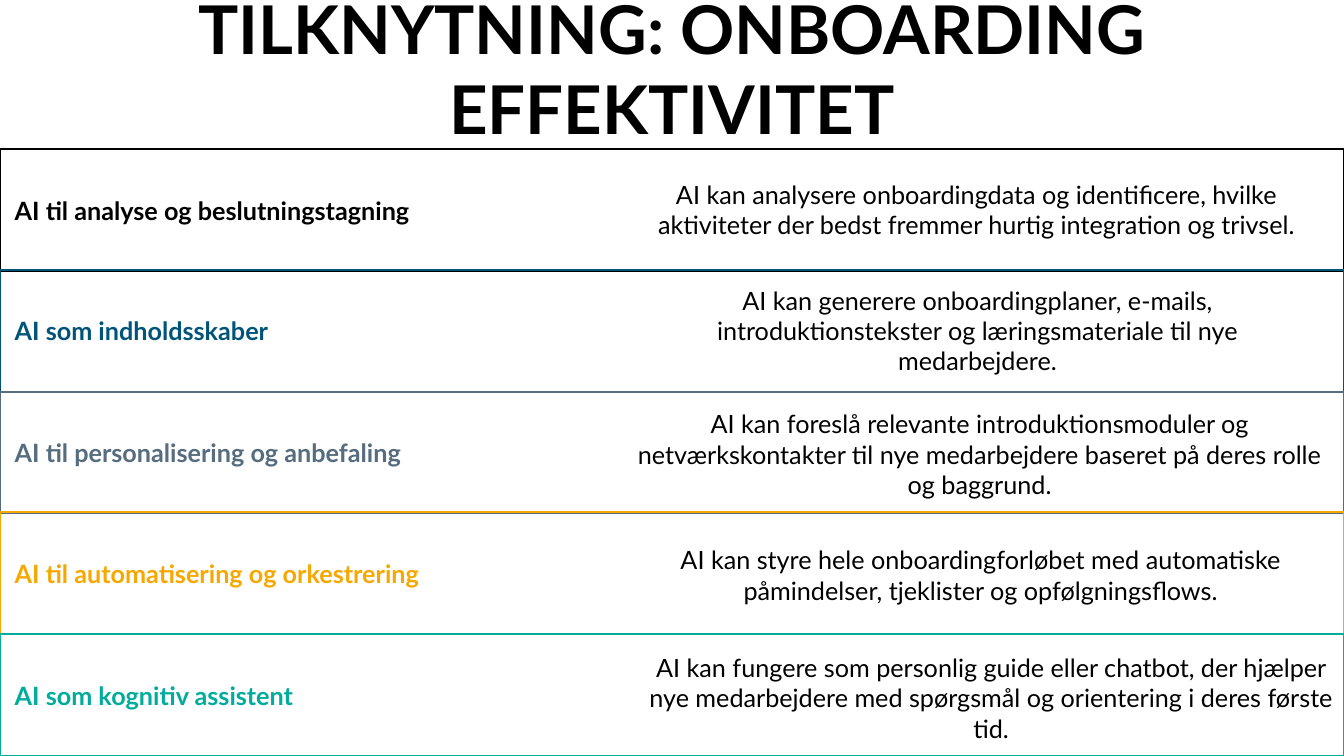
from dataclasses import dataclass

from pptx import Presentation
from pptx.dml.color import RGBColor
from pptx.enum.shapes import MSO_SHAPE
from pptx.enum.text import MSO_ANCHOR, MSO_AUTO_SIZE, PP_ALIGN
from pptx.util import Emu, Pt

RECTANGLE = MSO_SHAPE.RECTANGLE
MIDDLE = MSO_ANCHOR.MIDDLE
NO_AUTOFIT = MSO_AUTO_SIZE.NONE
LEFT, CENTER = PP_ALIGN.LEFT, PP_ALIGN.CENTER

EMU_PER_PX = 9525
SLIDE_WIDTH, SLIDE_HEIGHT = 1280, 720
TITLE_HEIGHT = 129
FIRST_ROW_TOP, ROW_HEIGHT = 142, 116
DESCRIPTION_WIDTH, DESCRIPTION_HEIGHT = 672, 115
HEADING_INSET = 14
TITLE_ONLY_LAYOUT = 5
FONT = "Lato"
BLACK = "000000"
TITLE = "TILKNYTNING: ONBOARDING EFFEKTIVITET"


@dataclass(frozen=True)
class Row:
    heading: str
    color: str
    description: str
    description_left: int
    description_top: int


ROWS = [
    Row("AI til analyse og beslutningstagning", BLACK,
        "AI kan analysere onboardingdata og identificere, hvilke aktiviteter "
        "der bedst fremmer hurtig integration og trivsel.", 594, 142),
    Row("AI som indholdsskaber", "00547A",
        "AI kan generere onboardingplaner, e-mails, introduktionstekster og "
        "læringsmateriale til nye medarbejdere.", 595, 257),
    Row("AI til personalisering og anbefaling", "556D7E",
        "AI kan foreslå relevante introduktionsmoduler og netværkskontakter "
        "til nye medarbejdere baseret på deres rolle og baggrund.", 597, 375),
    Row("AI til automatisering og orkestrering", "F6A800",
        "AI kan styre hele onboardingforløbet med automatiske påmindelser, "
        "tjeklister og opfølgningsflows.", 598, 490),
    Row("AI som kognitiv assistent", "00AC9C",
        "AI kan fungere som personlig guide eller chatbot, der hjælper nye "
        "medarbejdere med spørgsmål og orientering i deres første tid.", 608, 607),
]


def px(length: int) -> Emu:
    return Emu(length * EMU_PER_PX)


def rgb(color: str) -> RGBColor:
    return RGBColor.from_string(color)


def write_text(shape, text: str, size: int, color: str, bold: bool, alignment) -> None:
    frame = shape.text_frame
    frame.word_wrap = True
    frame.auto_size = NO_AUTOFIT
    frame.vertical_anchor = MIDDLE
    paragraph = frame.paragraphs[0]
    paragraph.alignment = alignment
    paragraph.line_spacing = 1.0
    run = paragraph.add_run()
    run.text = text
    run.font.name = FONT
    run.font.size = Pt(size)
    run.font.bold = bold
    run.font.color.rgb = rgb(color)


def add_title(slide) -> None:
    title = slide.shapes.title
    title.left, title.top = px(0), px(0)
    title.width, title.height = px(SLIDE_WIDTH), px(TITLE_HEIGHT)
    write_text(title, TITLE, 48, BLACK, True, CENTER)


def add_band(slide, row: Row, top: int) -> None:
    band = slide.shapes.add_shape(
        RECTANGLE, px(0), px(top), px(SLIDE_WIDTH), px(ROW_HEIGHT))
    band.shadow.inherit = False
    band.fill.background()
    band.line.color.rgb = rgb(row.color)
    band.line.width = Pt(1.5)
    band.text_frame.margin_left = px(HEADING_INSET)
    write_text(band, row.heading, 18, row.color, True, LEFT)


def add_description(slide, row: Row) -> None:
    box = slide.shapes.add_textbox(
        px(row.description_left), px(row.description_top),
        px(DESCRIPTION_WIDTH), px(DESCRIPTION_HEIGHT))
    write_text(box, row.description, 18, BLACK, False, CENTER)


def main() -> None:
    """Build the onboarding slide with one outlined band for each use of AI."""
    presentation = Presentation()
    presentation.slide_width = px(SLIDE_WIDTH)
    presentation.slide_height = px(SLIDE_HEIGHT)
    slide = presentation.slides.add_slide(presentation.slide_layouts[TITLE_ONLY_LAYOUT])
    add_title(slide)
    last_row_top = SLIDE_HEIGHT - ROW_HEIGHT
    for index, row in enumerate(ROWS):
        offset = index * (last_row_top - FIRST_ROW_TOP) // (len(ROWS) - 1)
        add_band(slide, row, FIRST_ROW_TOP + offset)
    for row in ROWS:
        add_description(slide, row)
    presentation.save("out.pptx")


if __name__ == "__main__":
    main()
